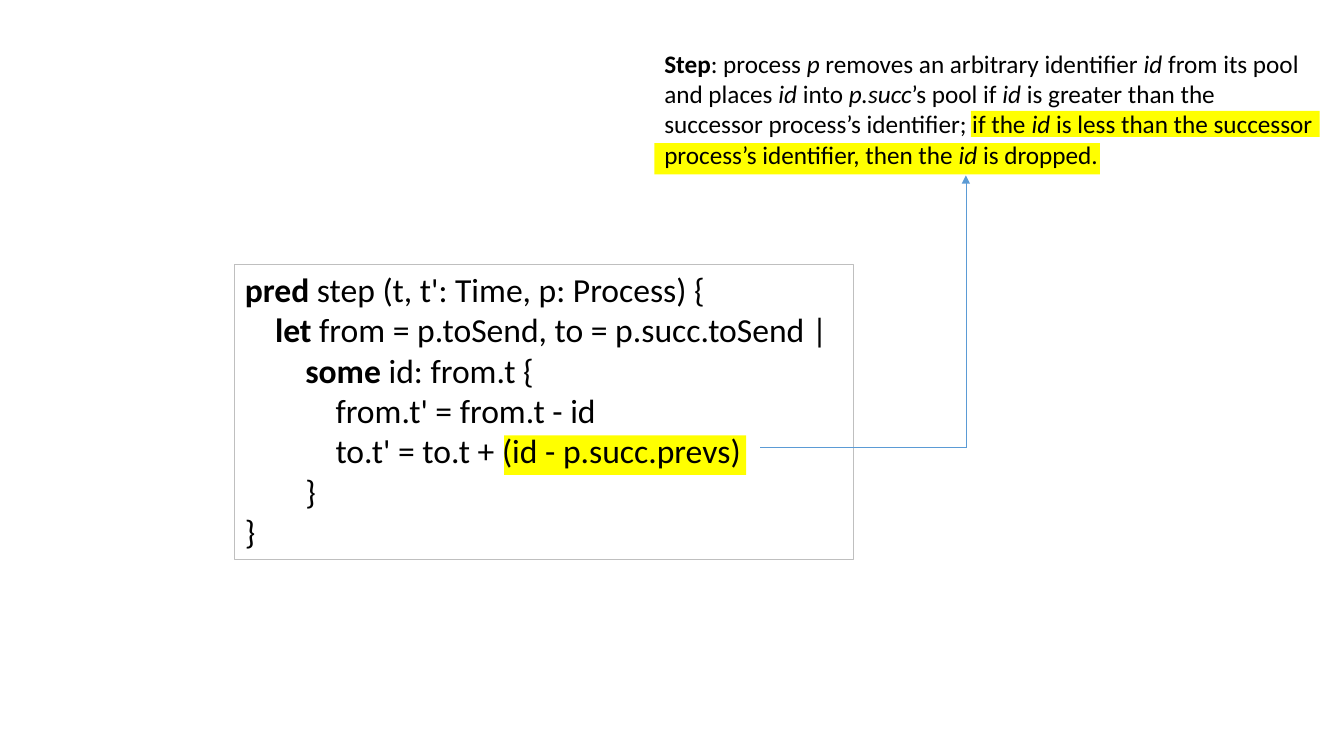
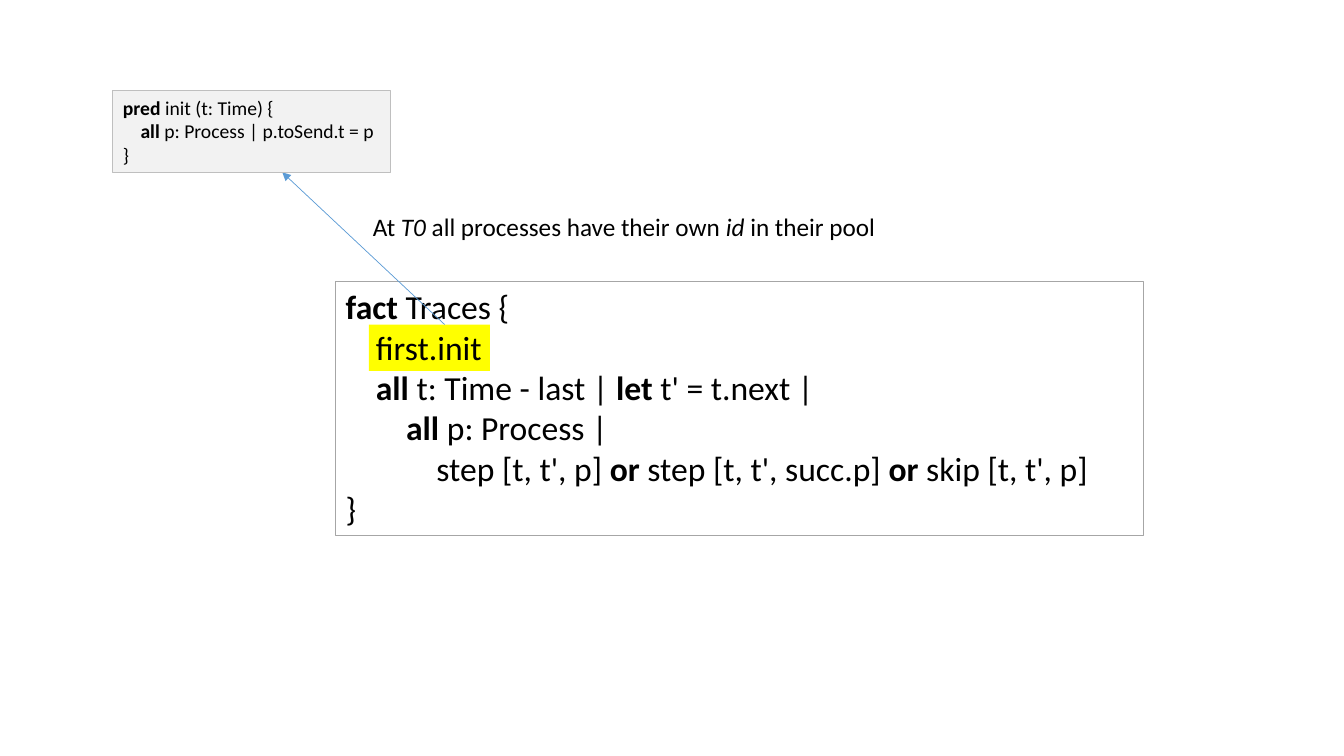
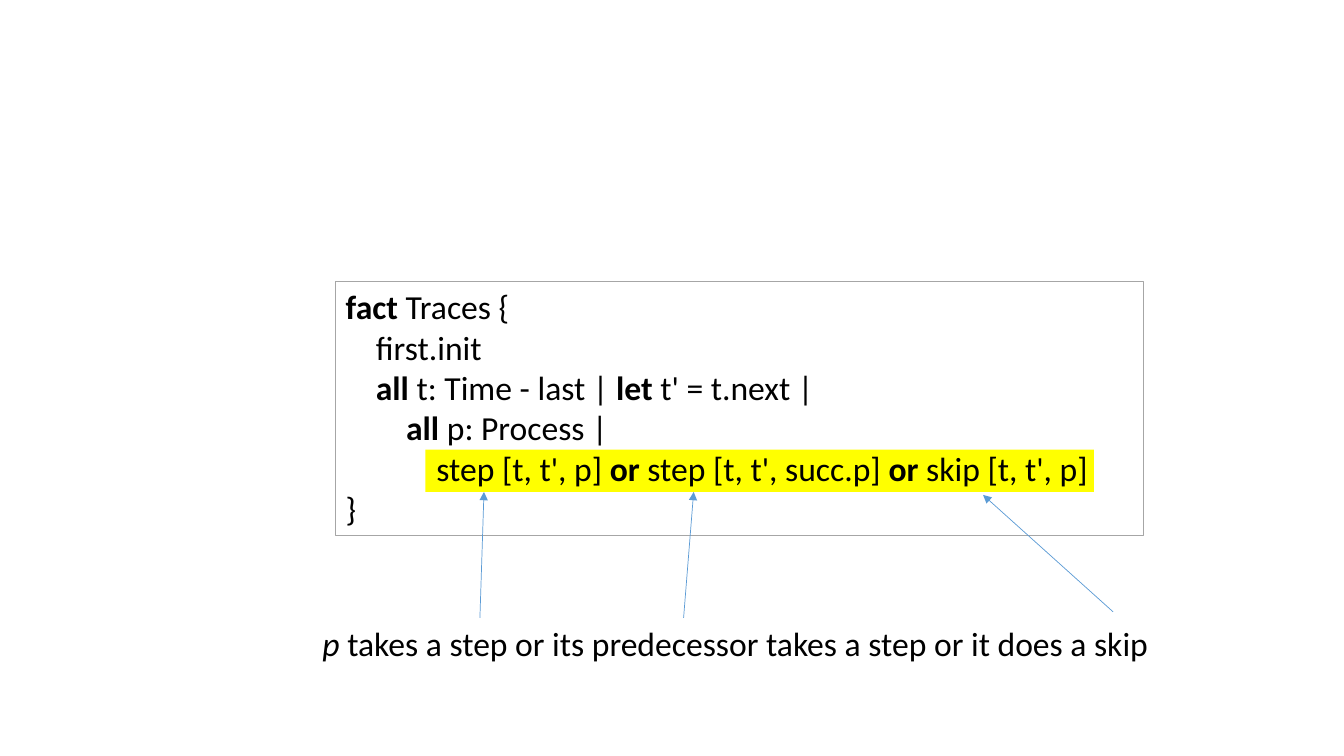
from dataclasses import dataclass

from lxml.etree import SubElement
from pptx import Presentation
from pptx.dml.color import RGBColor
from pptx.enum.shapes import MSO_CONNECTOR, MSO_SHAPE
from pptx.enum.text import MSO_ANCHOR, MSO_AUTO_SIZE, PP_ALIGN
from pptx.oxml.ns import qn
from pptx.shapes.autoshape import Shape
from pptx.slide import Slide
from pptx.util import Emu, Pt

SCALE = 9144  # EMU in one px, 100 px to the inch


@dataclass(frozen=True)
class Theme:
    font: str = "Calibri"
    ink: str = "000000"
    mark: str = "FFFF00"
    arrow: str = "5B9BD5"
    pale: str = "F2F2F2"
    light: str = "BFBFBF"
    gray: str = "A6A6A6"
    large: int = 24
    note: int = 18
    small: int = 14
    border: float = 0.75
    thin: float = 0.5
    indent: float = 0.9  # one code level, in ems


THEME = Theme()


def px(num: int) -> Emu:
    return Emu(num * SCALE)


def color(code: str) -> RGBColor:
    return RGBColor.from_string(code)


@dataclass(frozen=True)
class Line:
    """One paragraph: *bold* and _italic_ are marked in the text."""
    text: str
    level: int = 0


def fill_text(shape: Shape, lines: list[Line], size: int, wrap: bool = True) -> None:
    frame = shape.text_frame
    frame.word_wrap = wrap
    frame.auto_size = MSO_AUTO_SIZE.SHAPE_TO_FIT_TEXT
    frame.vertical_anchor = MSO_ANCHOR.TOP
    for num, line in enumerate(lines):
        para = frame.add_paragraph() if num else frame.paragraphs[0]
        para.alignment = PP_ALIGN.LEFT
        if line.level:
            left = Pt(line.level * size * THEME.indent)
            para._p.get_or_add_pPr().set("marL", str(left))
        for i, chunk in enumerate(line.text.split("*")):
            for j, part in enumerate(chunk.split("_")):
                if not part:
                    continue
                run = para.add_run()
                run.text = part
                font = run.font
                font.name, font.size = THEME.font, Pt(size)
                font.bold, font.italic = i % 2 == 1, j % 2 == 1
                font.color.rgb = color(THEME.ink)


def add_rect(slide: Slide, box: tuple[int, int, int, int], fill: str = "", edge: str = "") -> Shape:
    rect = slide.shapes.add_shape(MSO_SHAPE.RECTANGLE, *map(px, box))
    rect.shadow.inherit = False
    if fill:
        rect.fill.solid()
        rect.fill.fore_color.rgb = color(fill)
    else:
        rect.fill.background()
    if edge:
        rect.line.color.rgb = color(edge)
        rect.line.width = Pt(THEME.border)
    else:
        rect.line.fill.background()
    return rect


@dataclass(frozen=True)
class Mark:
    box: tuple[int, int, int, int]

    def draw(self, slide: Slide) -> None:
        add_rect(slide, self.box, THEME.mark)


@dataclass(frozen=True)
class Code:
    box: tuple[int, int, int, int]
    lines: list[Line]
    edge: str
    fill: str = ""
    size: int = THEME.large

    def draw(self, slide: Slide) -> None:
        fill_text(add_rect(slide, self.box, self.fill, self.edge), self.lines, self.size)


@dataclass(frozen=True)
class Note:
    box: tuple[int, int, int, int]
    text: str
    size: int = THEME.note
    wrap: bool = False

    def draw(self, slide: Slide) -> None:
        label = slide.shapes.add_textbox(*map(px, self.box))
        fill_text(label, [Line(self.text)], self.size, self.wrap)


@dataclass(frozen=True)
class Arrow:
    start: tuple[int, int]
    end: tuple[int, int]
    head: bool = True

    def draw(self, slide: Slide) -> None:
        ends = map(px, self.start + self.end)
        link = slide.shapes.add_connector(MSO_CONNECTOR.STRAIGHT, *ends)
        link.line.color.rgb = color(THEME.arrow)
        link.line.width = Pt(THEME.thin)
        if self.head:
            SubElement(link.line._get_or_add_ln(), qn("a:tailEnd"), type="triangle")
        SubElement(link._element.spPr, qn("a:effectLst"))


Part = Mark | Code | Note | Arrow

# Code listings
STEP = [
    Line("*pred* step (t, t': Time, p: Process) {"),
    Line("*let* from = p.toSend, to = p.succ.toSend |", 1),
    Line("*some* id: from.t {", 2),
    Line("from.t' = from.t - id", 3),
    Line("to.t' = to.t + (id - p.succ.prevs)", 3),
    Line("}", 2),
    Line("}"),
]
INIT = [
    Line("*pred* init (t: Time) {"),
    Line("*all* p: Process | p.toSend.t = p", 1),
    Line("}"),
]
TRACES = Code((333, 279, 801, 252), [
    Line("*fact* Traces {"),
    Line("first.init", 1),
    Line("*all* t: Time - last | *let* t' = t.next |", 1),
    Line("*all* p: Process |", 2),
    Line("step [t, t', p] *or* step [t, t', succ.p] *or* skip [t, t', p]", 3),
    Line("}"),
], THEME.gray)

# Slides, each from back to front
BEND = (958, 444)
SLIDES: list[list[Part]] = [
    [
        Mark((649, 142, 442, 31)),
        Mark((963, 110, 346, 26)),
        Note((649, 43, 667, 131),
             "*Step*: process _p_ removes an arbitrary identifier _id_ from its pool "
             "and places _id_ into _p.succ_’s pool if _id_ is greater than the "
             "successor process’s identifier; if the _id_ is less than the successor "
             "process’s identifier, then the _id_ is dropped.", wrap=True),
        Mark((500, 432, 240, 39)),
        Code((233, 262, 614, 293), STEP, THEME.light),
        Arrow((754, 444), BEND, head=False),
        Arrow(BEND, (958, 174)),
    ],
    [
        Mark((366, 322, 120, 46)),
        TRACES,
        Arrow((441, 322), (280, 171)),
        Note((360, 205, 524, 40), "At _T0_ all processes have their own _id_ in their pool"),
        Code((112, 90, 275, 81), INIT, THEME.light, THEME.pale, THEME.small),
    ],
    [
        Mark((422, 446, 663, 42)),
        TRACES,
        Note((310, 613, 847, 50),
             "_p_ takes a step or its predecessor takes a step or it does a skip", THEME.large),
        Arrow((476, 613), (480, 488)),
        Arrow((678, 613), (688, 488)),
        Arrow((1104, 607), (975, 491)),
    ],
]


def main() -> None:
    deck = Presentation()
    deck.slide_width, deck.slide_height = px(1333), px(750)
    blank = deck.slide_layouts[6]
    for parts in SLIDES:
        slide = deck.slides.add_slide(blank)
        for part in parts:
            part.draw(slide)
    deck.save("out.pptx")


if __name__ == "__main__":
    main()
